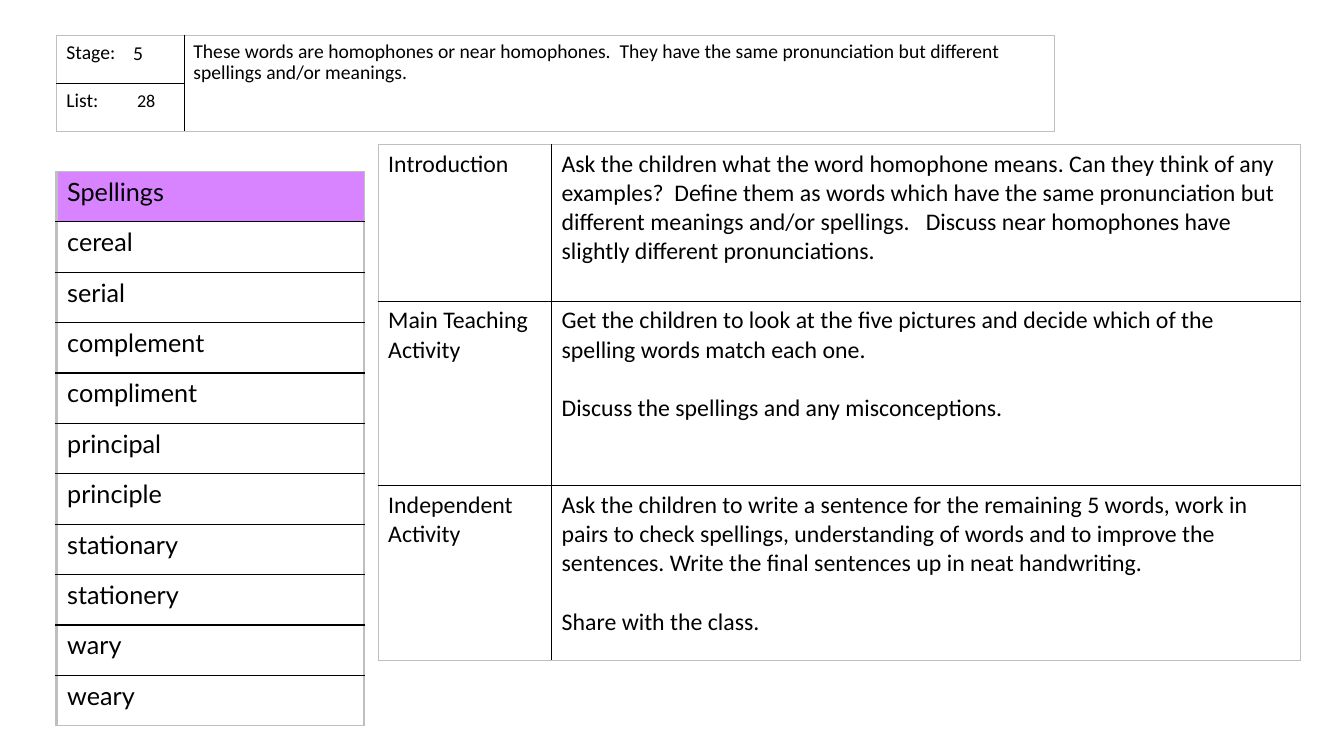
"""Build the spelling lesson slide for stage 5, list 28."""
import dataclasses

import lxml.etree
import pptx
import pptx.dml.color
import pptx.enum.shapes
import pptx.enum.text
import pptx.oxml.ns
import pptx.util

Cm = pptx.util.Cm
Pt = pptx.util.Pt
qn = pptx.oxml.ns.qn
rgb = pptx.dml.color.RGBColor.from_string


@dataclasses.dataclass(frozen=True)
class Theme:
    ink: str = "000000"
    paper: str = "FFFFFF"
    frame: str = "BFBFBF"
    heading_fill: str = "D883FF"
    body_font: str = "Calibri"
    spelling_font: str = "Lato"
    label_size: float = 14
    list_number_size: float = 12.9
    lesson_size: float = 17
    spelling_size: float = 18
    paragraph_gap: float = 21
    border_width: float = 1
    panel_opacity: int = 90


THEME = Theme()

REFERENCE = [[["Stage:"], []], [["List:"], []]]

LESSON = [
    [["Introduction"],
     ["Ask the children what the word homophone means. Can they think of any "
      "examples?  Define them as words which have the same pronunciation but "
      "different meanings and/or spellings.   Discuss near homophones have "
      "slightly different pronunciations."]],
    [["Main Teaching Activity"],
     ["Get the children to look at the five pictures and decide which of the "
      "spelling words match each one.",
      "Discuss the spellings and any misconceptions."]],
    [["Independent Activity"],
     ["Ask the children to write a sentence for the remaining 5 words, work in "
      "pairs to check spellings, understanding of words and to improve the "
      "sentences. Write the final sentences up in neat handwriting.",
      "Share with the class."]],
]

HEADING = "Spellings"
WORDS = ["cereal", "serial", "complement", "compliment", "principal",
         "principle", "stationary", "stationery", "wary", "weary"]

RULE = ("These words are homophones or near homophones.  They have the same "
        "pronunciation but different spellings and/or meanings.")

PANEL = (0.43, 0.38, 33.02, 18.34)

ENTRIES = [
    (1, "5", THEME.label_size, (3.1, 0.97, 1.19, 1.02)),
    (3, "28", THEME.list_number_size, (3.2, 2.18, 1.19, 1.02)),
    (2, RULE, THEME.label_size, (4.62, 0.91, 21.95, 2.41)),
]

SPELLING_GRID = dict(widths=[7.75], heights=[1.27] * (len(WORDS) + 1),
                     font=THEME.spelling_font, size=THEME.spelling_size,
                     heading_fill=THEME.heading_fill)

TABLES = [
    dict(rows=REFERENCE, corner=(1.42, 0.9), widths=[3.23, 21.92],
         heights=[1.21] * 2, font=THEME.body_font, size=THEME.label_size,
         merged=((0, 1), (1, 1))),
    dict(rows=[[[HEADING]]] + [[[]] for word in WORDS], corner=(1.41, 4.32),
         **SPELLING_GRID),
    dict(rows=LESSON, corner=(9.53, 3.65), widths=[4.37, 18.87],
         heights=[3.94, 4.65, 4.4], font=THEME.body_font, size=THEME.lesson_size),
    dict(rows=[[[word]] for word in [HEADING] + WORDS], corner=(1.44, 4.32),
         **SPELLING_GRID),
]


def apply(target, values):
    for name, value in values.items():
        setattr(target, name, value)


def add_panel(slide):
    panel = slide.shapes.add_shape(pptx.enum.shapes.MSO_SHAPE.RECTANGLE, *map(Cm, PANEL))
    panel.shadow.inherit = False
    for fill in (panel.fill, panel.line.fill):
        fill.solid()
        fill.fore_color.rgb = rgb(THEME.paper)
    panel.line.width = Pt(THEME.border_width)
    colour = panel._element.spPr.find(qn("a:solidFill"))[0]
    lxml.etree.SubElement(colour, qn("a:alpha"), val=str(THEME.panel_opacity * 1000))


def write(paragraph, text, font, size, **spacing):
    run = paragraph.add_run()
    run.text = text
    apply(run.font, dict(name=font, size=Pt(size), bold=False))
    run.font.color.rgb = rgb(THEME.ink)
    apply(paragraph, spacing)


def draw_borders(cell, outer):
    properties = cell._tc.get_or_add_tcPr()
    for side in "LRTB":
        line = lxml.etree.SubElement(properties, qn("a:ln" + side),
                                     w=str(Pt(THEME.border_width)))
        fill = lxml.etree.SubElement(line, qn("a:solidFill"))
        colour = THEME.frame if outer[side] else THEME.ink
        lxml.etree.SubElement(fill, qn("a:srgbClr"), val=colour)


def add_grid(slide, rows, corner, widths, heights, font, size,
             merged=None, heading_fill=None):
    frame = slide.shapes.add_table(len(rows), len(widths), *map(Cm, corner),
                                   Cm(sum(widths)), Cm(sum(heights)))
    grid = frame.table
    apply(grid, dict(first_row=False, horz_banding=False))
    for column, width in zip(grid.columns, widths):
        column.width = Cm(width)
    for row, height in zip(grid.rows, heights):
        row.height = Cm(height)
    if merged:
        first, last = merged
        grid.cell(*first).merge(grid.cell(*last))
    for r, row in enumerate(rows):
        for c, paragraphs in enumerate(row):
            cell = grid.cell(r, c)
            depth = cell.span_height if cell.is_merge_origin else 1
            draw_borders(cell, {"L": c == 0, "R": c == len(row) - 1,
                                "T": r == 0, "B": r + depth == len(rows)})
            cell.fill.background()
            for i, text in enumerate(paragraphs):
                body = cell.text_frame
                paragraph = body.add_paragraph() if i else body.paragraphs[0]
                write(paragraph, text, font, size,
                      space_before=Pt(THEME.paragraph_gap if i else 0))
    if heading_fill:
        heading = grid.cell(0, 0)
        heading.fill.solid()
        heading.fill.fore_color.rgb = rgb(heading_fill)


def fill_entry(entry, text, size, place):
    apply(entry, dict(zip(("left", "top", "width", "height"), map(Cm, place))))
    apply(entry.text_frame, dict(
        word_wrap=True, auto_size=pptx.enum.text.MSO_AUTO_SIZE.NONE,
        vertical_anchor=pptx.enum.text.MSO_ANCHOR.TOP))
    paragraph = entry.text_frame.paragraphs[0]
    properties = paragraph._p.get_or_add_pPr()
    for name in ("marL", "indent"):
        properties.set(name, "0")
    lxml.etree.SubElement(properties, qn("a:buNone"))
    write(paragraph, text, THEME.body_font, size, line_spacing=0.9, space_before=Pt(0))


def main():
    deck = pptx.Presentation()
    apply(deck, dict(slide_width=Cm(33.87), slide_height=Cm(19.05)))
    slide = deck.slides.add_slide(deck.slide_layouts.get_by_name("Comparison"))
    entries = {p.placeholder_format.idx: p for p in slide.placeholders}
    add_panel(slide)
    for table in TABLES:
        add_grid(slide, **table)
    for idx, text, size, place in ENTRIES:
        entry = entries.pop(idx)
        fill_entry(entry, text, size, place)
        slide.shapes._spTree.append(entry._element)
    for unused in entries.values():
        unused.element.getparent().remove(unused.element)
    deck.save("out.pptx")


if __name__ == "__main__":
    main()
